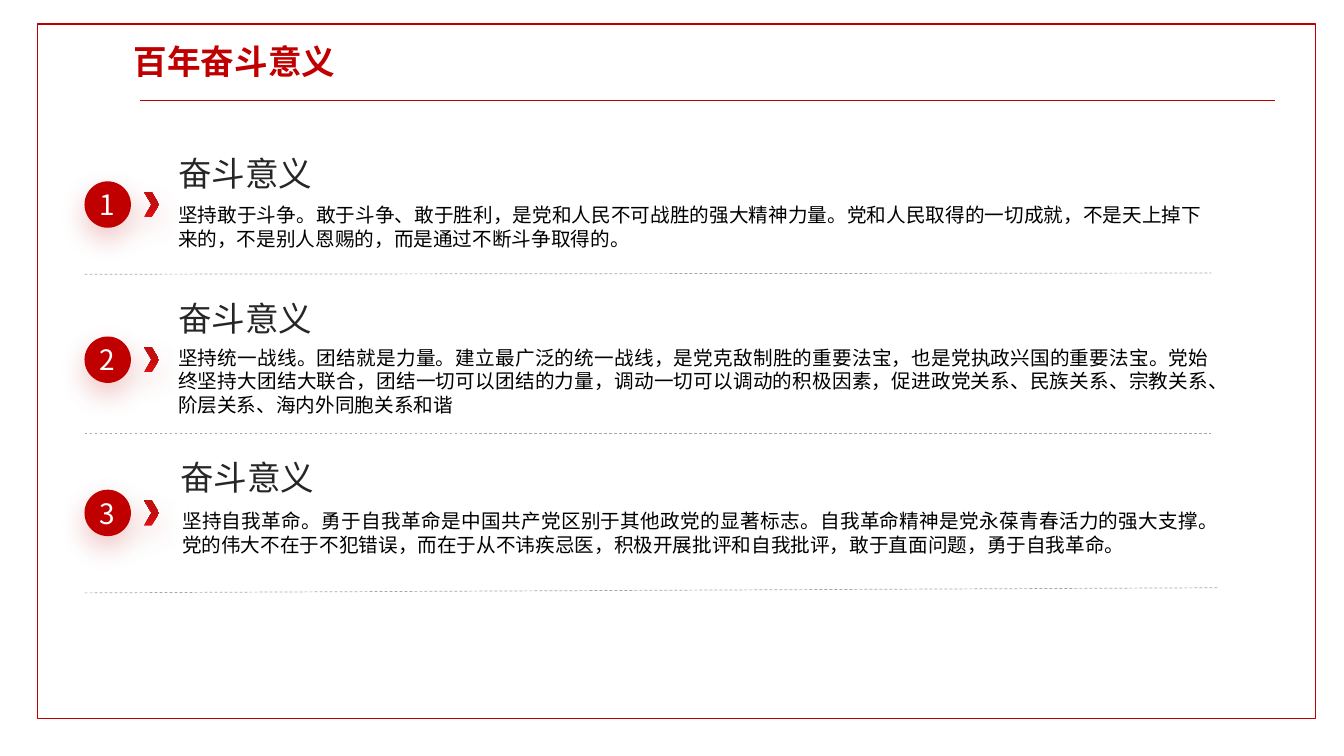
from lxml import etree
from pptx import Presentation
from pptx.dml.color import RGBColor
from pptx.enum.dml import MSO_LINE
from pptx.enum.shapes import MSO_CONNECTOR, MSO_SHAPE
from pptx.enum.text import MSO_ANCHOR, MSO_AUTO_SIZE, PP_ALIGN
from pptx.oxml import parse_xml
from pptx.oxml.ns import nsdecls, qn
from pptx.util import Cm, Pt

FONT = "Noto Sans CJK SC"
COLORS = {
    "red": "C00000",
    "bright": "DF1111",
    "glow": "C30F0F",
    "white": "FFFFFF",
    "black": "000000",
    "heading": "262626",
    "divider": "A6A6A6",
}
CIRCLE = 1.17
CHEVRON = (0.38, 0.64)
ITEMS = [
    {
        "top": 4.57, "heading": (4.24, 3.73, 4.09), "body": (4.24, 5.0, 26.31, 1.63),
        "text": "坚持敢于斗争。敢于斗争、敢于胜利，是党和人民不可战胜的强大精神力量。"
                "党和人民取得的一切成就，不是天上掉下来的，不是别人恩赐的，而是通过不断斗争取得的。",
        "divider": (6.91, 30.53, 6.88),
    },
    {
        "top": 8.48, "heading": (4.24, 7.37, 4.09), "body": (4.24, 8.59, 26.49, 2.34),
        "text": "坚持统一战线。团结就是力量。建立最广泛的统一战线，是党克敌制胜的重要法宝，"
                "也是党执政兴国的重要法宝。党始终坚持大团结大联合，团结一切可以团结的力量，"
                "调动一切可以调动的积极因素，促进政党关系、民族关系、宗教关系、"
                "阶层关系、海内外同胞关系和谐",
        "divider": (10.92, 30.53, 10.92),
    },
    {
        "top": 12.34, "heading": (4.29, 11.4, 5.69), "body": (4.34, 12.7, 26.64, 1.63),
        "text": "坚持自我革命。勇于自我革命是中国共产党区别于其他政党的显著标志。"
                "自我革命精神是党永葆青春活力的强大支撑。党的伟大不在于不犯错误，"
                "而在于从不讳疾忌医，积极开展批评和自我批评，敢于直面问题，勇于自我革命。",
        "divider": (14.94, 30.73, 14.81),
    },
]


def rgb(name):
    return RGBColor.from_string(COLORS[name])


def add_run(p, text, size, color, bold=False):
    r = p.add_run()
    r.text = text
    r.font.size = Pt(size)
    r.font.bold = bold
    r.font.name = FONT
    r.font.color.rgb = rgb(color)
    etree.SubElement(r.font._element, qn("a:ea")).set("typeface", FONT)


def add_text(shapes, box, text, size, color, align=PP_ALIGN.LEFT, bold=False):
    sp = shapes.add_textbox(*map(Cm, box))
    tf = sp.text_frame
    tf.word_wrap = True
    tf.auto_size = MSO_AUTO_SIZE.SHAPE_TO_FIT_TEXT
    p = tf.paragraphs[0]
    p.alignment = align
    add_run(p, text, size, color, bold)
    return sp


def add_line(shapes, start, end, color, dash=None):
    line = shapes.add_connector(MSO_CONNECTOR.STRAIGHT, *map(Cm, start + end))
    line.line.color.rgb = rgb(color)
    line.line.width = Pt(0.5)
    if dash:
        line.line.dash_style = dash
    etree.SubElement(line._element.spPr, qn("a:effectLst"))


def add_glow(sp):
    sp._element.spPr.append(parse_xml(
        f'<a:effectLst {nsdecls("a")}>'
        f'<a:outerShdw blurRad="{Pt(20)}" dist="{Pt(8)}" dir="5400000" algn="t" rotWithShape="0">'
        f'<a:srgbClr val="{COLORS["glow"]}"><a:alpha val="23000"/></a:srgbClr>'
        '</a:outerShdw></a:effectLst>'))


def add_frame(shapes, left, top, width, height):
    frame = shapes.add_shape(MSO_SHAPE.RECTANGLE, *map(Cm, (left, top, width, height)))
    frame.shadow.inherit = False
    frame.fill.solid()
    frame.fill.fore_color.rgb = rgb("white")
    frame.line.color.rgb = rgb("red")
    frame.line.width = Pt(1)
    rule_y = top + 1.91
    add_line(shapes, (left + 2.59, rule_y), (left + width - 1.01, rule_y), "red")


def add_title(shapes, left, top, width, height):
    title = add_text(shapes, (left, top, width, height), "百年奋斗意义", 24, "red",
                     PP_ALIGN.JUSTIFY, True)
    title.text_frame.margin_top = 0


def add_badge(shapes, left, top, number):
    circle = shapes.add_shape(MSO_SHAPE.OVAL, Cm(left), Cm(top), Cm(CIRCLE), Cm(CIRCLE))
    circle.fill.solid()
    circle.fill.fore_color.rgb = rgb("red")
    circle.line.fill.background()
    add_glow(circle)
    tf = circle.text_frame
    tf.margin_left = tf.margin_top = tf.margin_right = tf.margin_bottom = 0
    tf.vertical_anchor = MSO_ANCHOR.MIDDLE
    p = tf.paragraphs[0]
    p.alignment = PP_ALIGN.CENTER
    add_run(p, str(number), 20, "white")

    width, height = CHEVRON
    chevron = shapes.add_shape(MSO_SHAPE.CHEVRON, Cm(left + 1.5),
                               Cm(top + (CIRCLE - height) / 2), Cm(width), Cm(height))
    chevron._element.spPr.xfrm.set("flipV", "1")
    chevron.fill.gradient()
    chevron.fill.gradient_angle = 270
    for stop, (position, color) in zip(chevron.fill.gradient_stops,
                                       [(0, "bright"), (0.45, "glow")]):
        stop.position = position
        stop.color.rgb = rgb(color)
    chevron.line.fill.background()
    add_glow(chevron)


def add_item(shapes, left, number, item):
    group = shapes.add_group_shape().shapes
    add_badge(group, left, item["top"], number)
    add_text(group, item["body"], item["text"], 14, "black", PP_ALIGN.JUSTIFY)
    add_text(group, item["heading"] + (1.35,), "奋斗意义", 24, "heading")


def main():
    prs = Presentation()
    prs.slide_width, prs.slide_height = Cm(33.87), Cm(19.05)
    s = prs.slides.add_slide(prs.slide_layouts[6])
    left = 2.13
    add_frame(s.shapes, 0.94, 0.61, 32.21, 17.5)
    for item in ITEMS:
        start_y, end_x, end_y = item["divider"]
        add_line(s.shapes, (left, start_y), (end_x, end_y), "divider", MSO_LINE.DASH)
    for number, item in enumerate(ITEMS, 1):
        add_item(s.shapes, left, number, item)
    add_title(s.shapes, 3.12, 1.04, 6.4, 1.27)
    prs.save("out.pptx")


if __name__ == "__main__":
    main()
